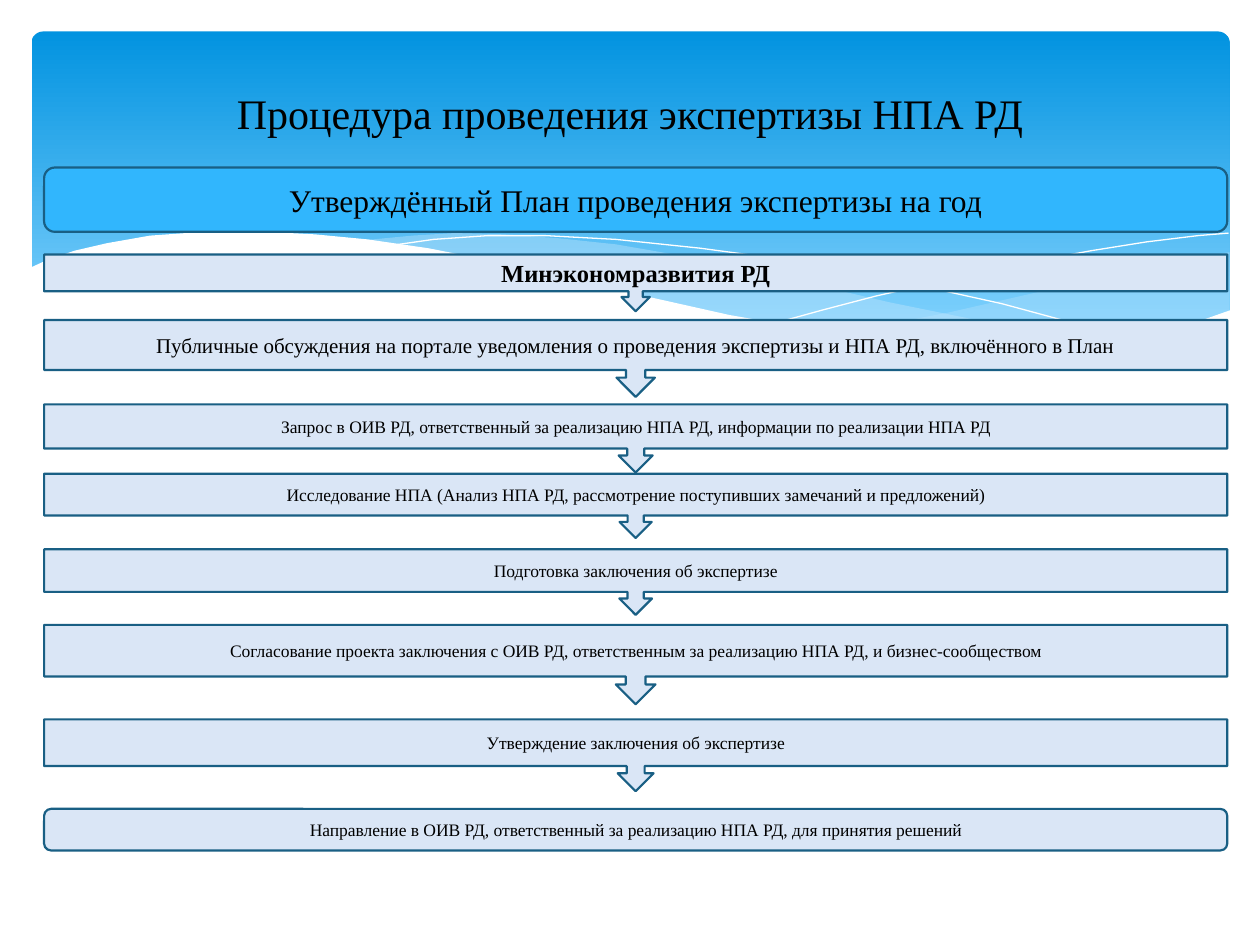
from lxml import etree
from pptx import Presentation
from pptx import util as u
from pptx.dml.color import RGBColor
from pptx.enum import shapes, text
from pptx.oxml.ns import qn

FONT = "Times New Roman"
BLACK, WHITE = "000000", "FFFFFF"
PALE, BRIGHT, OUTLINE, MIST = "DAE6F6", "31B6FD", "195F84", "C6E7FC"
LEFT, WIDTH = 0.35, 9.39
ROUNDED = shapes.MSO_SHAPE.ROUNDED_RECTANGLE
CALLOUT = shapes.MSO_SHAPE.DOWN_ARROW_CALLOUT

RIGHT_WAVE = [
    (9.76, 2), (9.35, 2.07), (8.91, 2.16), (8.32, 2.3), (7.53, 2.48), (7.06, 2.57),
    (6.61, 2.65), (7.05, 2.71), (7.45, 2.75), (8.03, 2.78), (8.54, 2.76),
    (8.97, 2.7), (9.35, 2.62), (9.76, 2.47)]
MIDDLE_WAVE = [
    (8.93, 2.73), (8.37, 2.65), (7.75, 2.54), (7.06, 2.4), (6.29, 2.22), (5.84, 2.11),
    (5.41, 2.03), (4.89, 1.94), (4.42, 1.89), (3.99, 1.86), (3.61, 1.85), (3.28, 1.87),
    (2.86, 1.91), (3.42, 1.99), (4.04, 2.11), (4.91, 2.32), (5.66, 2.48), (6.34, 2.61),
    (6.95, 2.7), (7.48, 2.76), (7.96, 2.78), (8.48, 2.77)]
FALLING_LINE = [
    (3.09, 1.95), (3.44, 1.9), (3.87, 1.87), (4.33, 1.87), (4.89, 1.9), (5.56, 1.97),
    (6.08, 2.04), (6.65, 2.13), (7.27, 2.26), (7.95, 2.41), (8.69, 2.61), (9.07, 2.72)]
RISING_LINE = [
    (6.13, 2.57), (6.53, 2.46), (6.95, 2.35), (7.48, 2.23), (8.06, 2.1), (8.66, 1.99),
    (9.1, 1.92), (9.51, 1.87), (9.75, 1.85)]
WHITE_WAVE = [
    (9.77, 2.46), (9.4, 2.59), (8.99, 2.69), (8.5, 2.75), (8.09, 2.77), (7.61, 2.75),
    (7.08, 2.7), (6.48, 2.62), (5.79, 2.5), (5.03, 2.33), (4.47, 2.2), (3.91, 2.07),
    (3.4, 1.97), (2.92, 1.9), (2.5, 1.86), (2.11, 1.84), (1.61, 1.84), (1.19, 1.87),
    (0.85, 1.93), (0.59, 1.99), (0.36, 2.07), (0.23, 2.13), (0.23, 3.29), (9.77, 3.29)]

# kind, top, height, fill, text size, bold, wording
STEPS = [
    (ROUNDED, 1.33, 0.51, BRIGHT, 18, False, "Утверждённый План проведения экспертизы на год"),
    (CALLOUT, 2.02, 0.45, PALE, 14, True, "Минэкономразвития РД"),
    (CALLOUT, 2.54, 0.61, PALE, 12, False,
     "Публичные обсуждения на портале уведомления о проведения экспертизы и НПА РД, "
     "включённого в План"),
    (CALLOUT, 3.21, 0.54, PALE, 10, False,
     "Запрос в ОИВ РД, ответственный за реализацию НПА РД, информации по реализации НПА РД"),
    (CALLOUT, 3.76, 0.51, PALE, 10, False,
     "Исследование НПА (Анализ НПА РД, рассмотрение поступивших замечаний и предложений)"),
    (CALLOUT, 4.36, 0.52, PALE, 10, False, "Подготовка заключения об экспертизе"),
    (CALLOUT, 4.96, 0.63, PALE, 10, False,
     "Согласование проекта заключения с ОИВ РД, ответственным за реализацию НПА РД, "
     "и бизнес-сообществом"),
    (CALLOUT, 5.71, 0.57, PALE, 10, False, "Утверждение заключения об экспертизе"),
    (ROUNDED, 6.42, 0.33, PALE, 10, False,
     "Направление в ОИВ РД, ответственный за реализацию НПА РД, для принятия решений"),
]


def rgb(value):
    return RGBColor.from_string(value)


def paint(shape, fill, alpha=None):
    shape.fill.solid()
    shape.fill.fore_color.rgb = rgb(fill)
    if alpha is not None:
        color = shape.fill._xPr.find(qn("a:solidFill"))[0]
        etree.SubElement(color, qn("a:alpha"), val=str(alpha * 1000))


def write(shape, wording, size, bold=False):
    frame = shape.text_frame
    frame.word_wrap = True
    frame.vertical_anchor = text.MSO_ANCHOR.MIDDLE
    paragraph = frame.paragraphs[0]
    paragraph.text = wording
    paragraph.alignment = text.PP_ALIGN.CENTER
    font = paragraph.font
    font.name, font.size, font.bold = FONT, u.Pt(size), bold
    font.color.rgb = rgb(BLACK)


def add_banner(slide):
    banner = slide.shapes.add_shape(
        ROUNDED, u.Inches(0.25), u.Inches(0.25), u.Inches(9.51), u.Inches(2.7))
    banner.shadow.inherit = False
    banner.adjustments[0] = 0.034
    banner.line.fill.background()
    banner.fill.gradient()
    banner.fill.gradient_angle = 270
    stops = zip(banner.fill.gradient_stops, ((0, "0293E0"), (0.9, "83D3FE")))
    for stop, (position, color) in stops:
        stop.position = position
        stop.color.rgb = rgb(color)


def add_curve(slide, points, close):
    (x, y), *rest = [(u.Inches(x), u.Inches(y)) for x, y in points]
    builder = slide.shapes.build_freeform(x, y)
    builder.add_line_segments(rest, close=close)
    curve = builder.convert_to_shape()
    curve.shadow.inherit = False
    return curve


def add_wave(slide, points, fill, alpha=None):
    wave = add_curve(slide, points, True)
    paint(wave, fill, alpha)
    wave.line.fill.background()


def add_hairline(slide, points):
    hairline = add_curve(slide, points, False)
    hairline.fill.background()
    hairline.line.color.rgb = rgb(WHITE)
    hairline.line.width = u.Pt(0)


def add_title(slide, wording):
    title = slide.shapes.add_textbox(
        u.Inches(0.5), u.Inches(0.37), u.Inches(9), u.Inches(1.05))
    write(title, wording, 24)


def add_step(slide, kind, top, height, fill, size, bold, wording):
    step = slide.shapes.add_shape(
        kind, u.Inches(LEFT), u.Inches(top), u.Inches(WIDTH), u.Inches(height))
    step.shadow.inherit = False
    paint(step, fill)
    step.line.color.rgb = rgb(OUTLINE)
    step.line.width = u.Pt(1.25)
    write(step, wording, size, bold)


def main():
    presentation = Presentation()
    presentation.slide_width, presentation.slide_height = u.Inches(10), u.Inches(7.5)
    slide = presentation.slides.add_slide(presentation.slide_layouts[6])
    add_banner(slide)
    add_wave(slide, RIGHT_WAVE, MIST, 29)
    add_wave(slide, MIDDLE_WAVE, MIST, 40)
    add_hairline(slide, FALLING_LINE)
    add_hairline(slide, RISING_LINE)
    add_wave(slide, WHITE_WAVE, WHITE)
    add_title(slide, "Процедура проведения экспертизы НПА РД")
    for step in STEPS:
        add_step(slide, *step)
    presentation.save("out.pptx")


if __name__ == "__main__":
    main()
